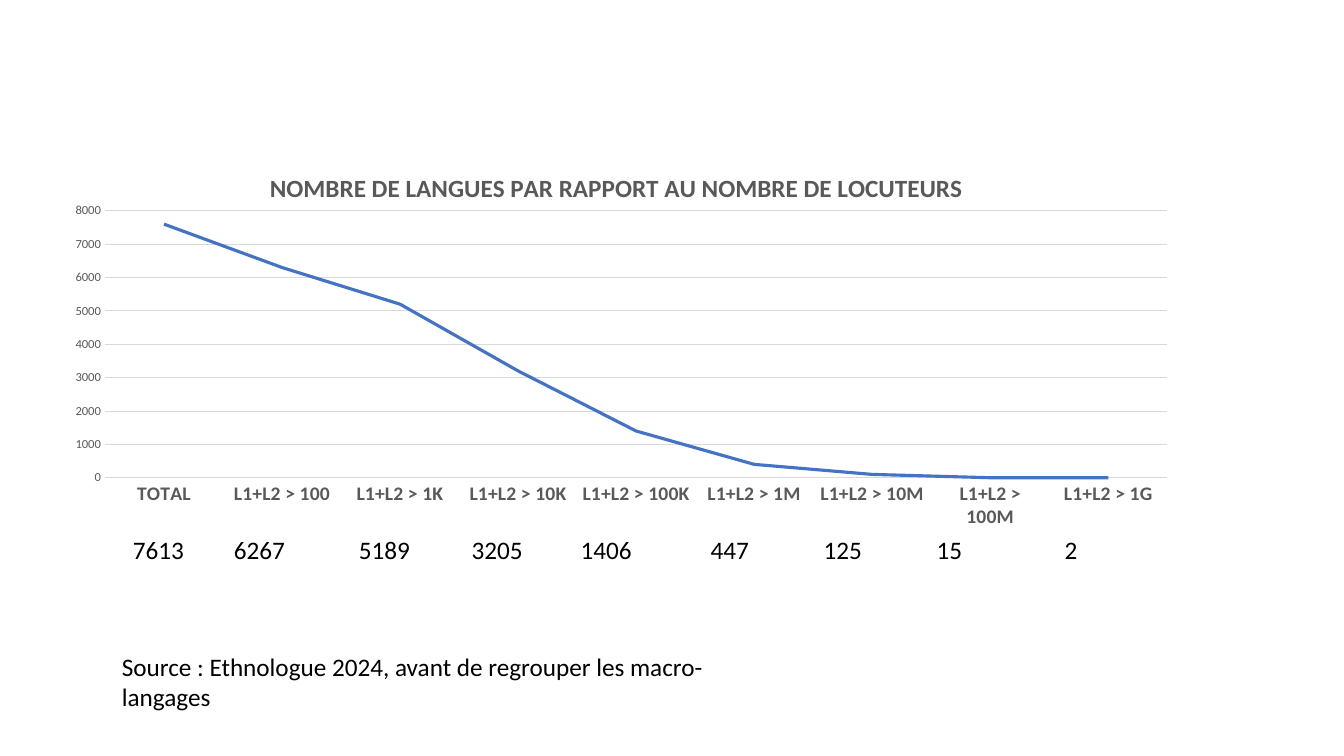
from dataclasses import dataclass

from pptx import Presentation
from pptx.chart.chart import Chart
from pptx.chart.data import CategoryChartData
from pptx.dml.color import RGBColor
from pptx.enum.chart import XL_CHART_TYPE as ChartType, XL_TICK_MARK as TickMark
from pptx.oxml import parse_xml
from pptx.oxml.ns import nsdecls, qn
from pptx.oxml.xmlchemy import OxmlElement
from pptx.slide import Slide
from pptx.text.text import Font
from pptx.util import Inches, Pt

FONT = "Calibri"
BLACK = RGBColor(0x00, 0x00, 0x00)
GREY = RGBColor(0x59, 0x59, 0x59)
LIGHT_GREY = RGBColor(0xD9, 0xD9, 0xD9)
BLUE = RGBColor(0x44, 0x72, 0xC4)
PLOT_AREA = {"x": 0.045, "y": 0.156, "w": 0.945, "h": 0.723}


@dataclass
class Threshold:
    label: str
    languages: int
    tab: float  # inches from the left edge of the row of counts


@dataclass
class Caption:
    text: str
    left: float
    top: float
    width: float
    tabs: tuple[float, ...] = ()


THRESHOLDS = [
    Threshold("TOTAL", 7613, 0),
    Threshold("L1+L2 > 100", 6267, 1),
    Threshold("L1+L2 > 1K", 5189, 2.24),
    Threshold("L1+L2 > 10K", 3205, 3.36),
    Threshold("L1+L2 > 100K", 1406, 4.44),
    Threshold("L1+L2 > 1M", 447, 5.73),
    Threshold("L1+L2 > 10M", 125, 6.85),
    Threshold("L1+L2 > 100M", 15, 7.97),
    Threshold("L1+L2 > 1G", 2, 9.24),
]
CAPTIONS = [
    Caption("\t".join(str(t.languages) for t in THRESHOLDS), 1.22, 5.25, 9.79,
            tuple(t.tab for t in THRESHOLDS[1:])),
    Caption("Source : Ethnologue 2024, avant de regrouper les macro-langages",
            1.11, 6.41, 6.82),
]


def set_font(font: Font, size: float, color: RGBColor, bold: bool = False) -> None:
    font.name, font.size, font.bold = FONT, Pt(size), bold
    font.color.rgb = color


def place_plot_area(chart: Chart) -> None:
    """Fix the inner plot area as fractions of the chart."""
    plot_area = chart.element.find(".//" + qn("c:plotArea"))
    for layout in plot_area.findall(qn("c:layout")):
        plot_area.remove(layout)
    modes = "".join(f'<c:{side}Mode val="edge"/>' for side in "xy")
    sizes = "".join(f'<c:{key} val="{val}"/>' for key, val in PLOT_AREA.items())
    plot_area.insert(0, parse_xml(
        f'<c:layout {nsdecls("c")}><c:manualLayout><c:layoutTarget val="inner"/>'
        f"{modes}{sizes}</c:manualLayout></c:layout>"))


def add_language_chart(s: Slide) -> None:
    data = CategoryChartData()
    data.categories = [t.label for t in THRESHOLDS]
    data.add_series("Series 1", [round(t.languages, -2) for t in THRESHOLDS])
    chart = s.shapes.add_chart(ChartType.LINE, Inches(0.54), Inches(1.52),
                               Inches(11.15), Inches(3.73), data).chart
    set_font(chart.font, 10, BLACK)
    chart.has_legend = False
    chart.has_title = True
    chart.chart_title.include_in_layout = False
    tf = chart.chart_title.text_frame
    tf.text = "NOMBRE DE LANGUES PAR RAPPORT AU NOMBRE DE LOCUTEURS"
    set_font(tf.paragraphs[0].font, 18, GREY, bold=True)
    place_plot_area(chart)

    cat_axis, val_axis = chart.category_axis, chart.value_axis
    for axis in (cat_axis, val_axis):
        axis.major_tick_mark = axis.minor_tick_mark = TickMark.NONE
    set_font(cat_axis.tick_labels.font, 14, GREY, bold=True)
    set_font(val_axis.tick_labels.font, 9, GREY)
    val_axis.minimum_scale, val_axis.maximum_scale, val_axis.major_unit = 0, 8000, 1000
    val_axis.has_major_gridlines = True
    val_axis.format.line.fill.background()
    for line in (cat_axis.format.line, val_axis.major_gridlines.format.line):
        line.color.rgb, line.width = LIGHT_GREY, Pt(0.75)

    plot = chart.plots[0]
    plot.vary_by_categories = False
    series = plot.series[0]
    series.smooth = False
    series.format.line.color.rgb = BLUE
    series.format.line.width = Pt(2.25)


def add_caption(s: Slide, caption: Caption) -> None:
    tf = s.shapes.add_textbox(Inches(caption.left), Inches(caption.top),
                              Inches(caption.width), Inches(0.4)).text_frame
    tf.word_wrap = True
    p = tf.paragraphs[0]
    p.text = caption.text
    if caption.tabs:
        tab_list = OxmlElement("a:tabLst")
        for position in caption.tabs:
            tab = OxmlElement("a:tab")
            tab.set("pos", str(Inches(position)))
            tab.set("algn", "l")
            tab_list.append(tab)
        p._p.get_or_add_pPr().append(tab_list)
    set_font(p.font, 18, BLACK)


def main() -> None:
    prs = Presentation()
    prs.slide_width, prs.slide_height = Inches(13.33), Inches(7.5)
    s = prs.slides.add_slide(prs.slide_layouts.get_by_name("Blank"))
    add_language_chart(s)
    for caption in CAPTIONS:
        add_caption(s, caption)
    prs.save("out.pptx")


if __name__ == "__main__":
    main()
